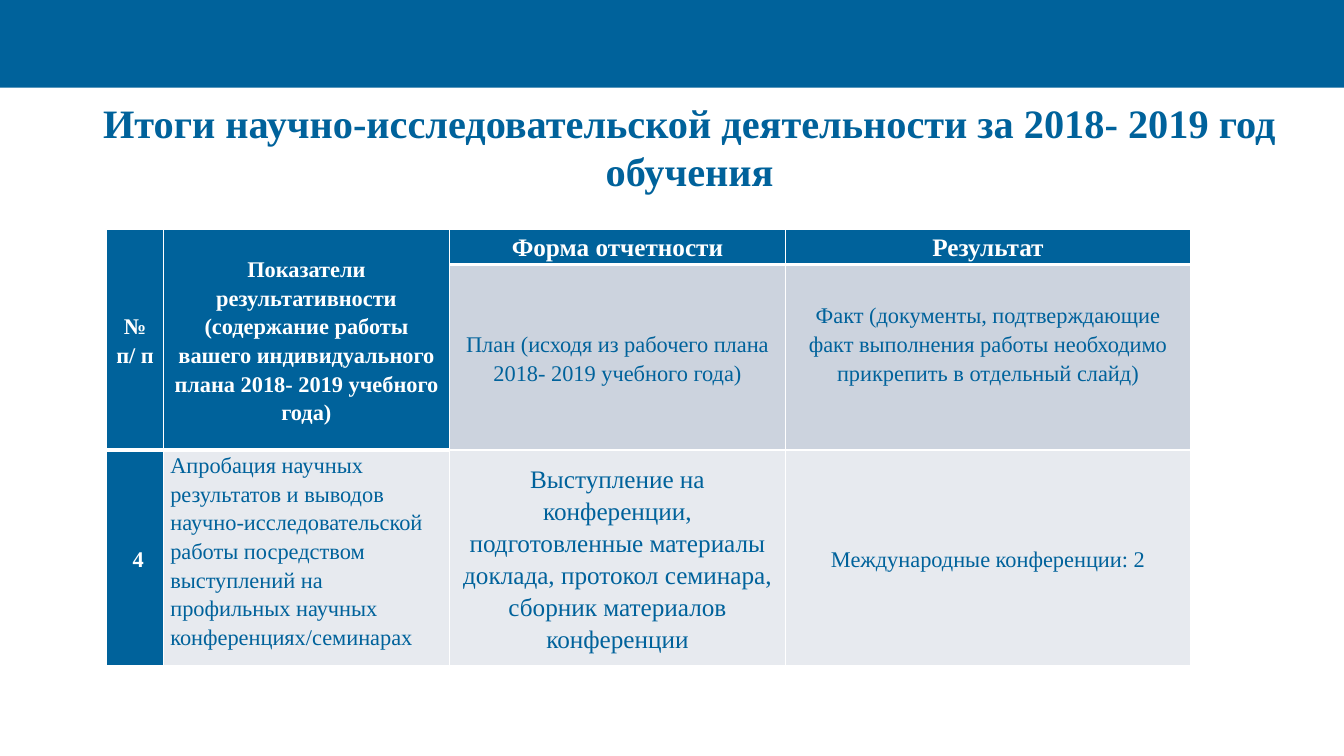
from dataclasses import dataclass, field
from itertools import product

from lxml import etree
from pptx import Presentation
from pptx import util as u
from pptx.dml.color import RGBColor
from pptx.enum import shapes, text
from pptx.oxml.ns import qn

GRID_COLUMNS, GRID_ROWS = 1333, 750
CELL_SIZE = u.Inches(0.01)
FONT = "Times New Roman"
COLOURS = {"blue": "00629B", "white": "FFFFFF", "band": "CCD3DE", "pale": "E7EAEF"}
COLUMN_WIDTHS = (56, 284, 333, 402)
ROW_HEIGHTS = (33, 93, 190)
TABLE_AREA = (106, 228, sum(COLUMN_WIDTHS), 399)
MERGED_COLUMNS = 2
CENTER, LEFT = text.PP_ALIGN.CENTER, text.PP_ALIGN.LEFT
MIDDLE, TOP = text.MSO_ANCHOR.MIDDLE, text.MSO_ANCHOR.TOP


@dataclass(frozen=True)
class Entry:
    row: int
    column: int
    lines: tuple[str, ...]
    fill: str
    size: float = 16
    align: text.PP_ALIGN = CENTER
    anchor: text.MSO_ANCHOR = MIDDLE
    margins: dict[str, int] = field(default_factory=dict)


ENTRIES = (
    Entry(0, 0, ("№ п/ п",), "blue"),
    Entry(0, 1, ("Показатели результативности",
                 "(содержание работы вашего индивидуального плана 2018- 2019 учебного года)"), "blue"),
    Entry(0, 2, ("Форма отчетности",), "blue", 18, anchor=TOP),
    Entry(0, 3, ("Результат",), "blue", 18, anchor=TOP),
    Entry(1, 2, ("План (исходя из рабочего плана 2018- 2019 учебного года)",), "band"),
    Entry(1, 3, ("Факт (документы, подтверждающие факт выполнения работы необходимо "
                 "прикрепить в отдельный слайд)",), "band", margins={"margin_bottom": 28}),
    Entry(2, 0, ("4",), "blue", margins={"margin_left": 13}),
    Entry(2, 1, ("Апробация научных результатов и выводов научно-исследовательской работы "
                 "посредством выступлений на профильных научных конференциях/семинарах",),
          "pale", align=LEFT, anchor=TOP),
    Entry(2, 2, ("Выступление на конференции, подготовленные материалы доклада, "
                 "протокол семинара, сборник материалов конференции",), "pale", 18),
    Entry(2, 3, ("Международные конференции: 2",), "pale"),
)


def colour(name: str) -> RGBColor:
    return RGBColor.from_string(COLOURS[name])


def grid(*lengths: int) -> list[int]:
    return [length * CELL_SIZE for length in lengths]


def apply(target: object, values: dict[str, object]) -> None:
    for name, value in values.items():
        setattr(target, name, value)


def write(frame, lines: tuple[str, ...], font_colour: str, font: dict[str, object],
          layout: dict[str, object]) -> None:
    for index, line in enumerate(lines):
        para = frame.add_paragraph() if index else frame.paragraphs[0]
        apply(para, layout)
        span = para.add_run()
        span.text = line
        apply(span.font, {"name": FONT} | font)
        span.font.color.rgb = colour(font_colour)


def draw_borders(cell, row: int, column: int) -> None:
    header_rows = 2 if column < MERGED_COLUMNS else 1
    widths = {"L": 1, "R": 1,
              "T": 3 if row == header_rows else 1,
              "B": 3 if row < header_rows else 1}
    properties = cell._tc.get_or_add_tcPr()
    for side, width in widths.items():
        line = etree.SubElement(properties, qn(f"a:ln{side}"), w=str(u.Pt(width)))
        fill = etree.SubElement(line, qn("a:solidFill"))
        etree.SubElement(fill, qn("a:srgbClr"), val=COLOURS["white"])


def fill_cell(cell, entry: Entry) -> None:
    margins = {"margin_left": 7, "margin_right": 7, "margin_top": 0, "margin_bottom": 0}
    margins |= entry.margins
    apply(cell, {name: length * CELL_SIZE for name, length in margins.items()})
    cell.vertical_anchor = entry.anchor
    on_blue = entry.fill == "blue"
    write(cell.text_frame, entry.lines, "white" if on_blue else "blue",
          {"size": u.Pt(entry.size), "bold": on_blue},
          {"alignment": entry.align, "line_spacing": 1.15})


def draw_table(page) -> None:
    frame = page.shapes.add_table(len(ROW_HEIGHTS), len(COLUMN_WIDTHS), *grid(*TABLE_AREA))
    table = frame.table
    for column, width in zip(table.columns, grid(*COLUMN_WIDTHS)):
        column.width = width
    for row, height in zip(table.rows, grid(*ROW_HEIGHTS)):
        row.height = height
    frame.height = TABLE_AREA[3] * CELL_SIZE

    fills = {(entry.row, entry.column): entry.fill for entry in ENTRIES}
    for row, column in product(range(len(ROW_HEIGHTS)), range(len(COLUMN_WIDTHS))):
        cell = table.cell(row, column)
        draw_borders(cell, row, column)
        cell.fill.solid()
        cell.fill.fore_color.rgb = colour(fills.get((row, column), "blue"))
    for column in range(MERGED_COLUMNS):
        table.cell(0, column).merge(table.cell(1, column))
    for entry in ENTRIES:
        fill_cell(table.cell(entry.row, entry.column), entry)


def draw_band(page) -> None:
    band = page.shapes.add_shape(shapes.MSO_SHAPE.RECTANGLE, *grid(0, 0, GRID_COLUMNS, 87))
    band.shadow.inherit = False
    band.fill.solid()
    band.fill.fore_color.rgb = colour("blue")
    band.line.fill.background()


def draw_title(page) -> None:
    box = page.shapes.add_textbox(*grid(84, 100, 1200, 90))
    apply(box.text_frame, {"word_wrap": True, "vertical_anchor": MIDDLE})
    write(box.text_frame, ("Итоги научно-исследовательской деятельности за 2018- 2019 год обучения",),
          "blue", {"size": u.Pt(28.8), "bold": True}, {"alignment": CENTER})


def main() -> None:
    deck = Presentation()
    deck.slide_width, deck.slide_height = grid(GRID_COLUMNS, GRID_ROWS)
    page = deck.slides.add_slide(deck.slide_layouts[6])
    draw_band(page)
    draw_title(page)
    draw_table(page)
    deck.save("out.pptx")


if __name__ == "__main__":
    main()
